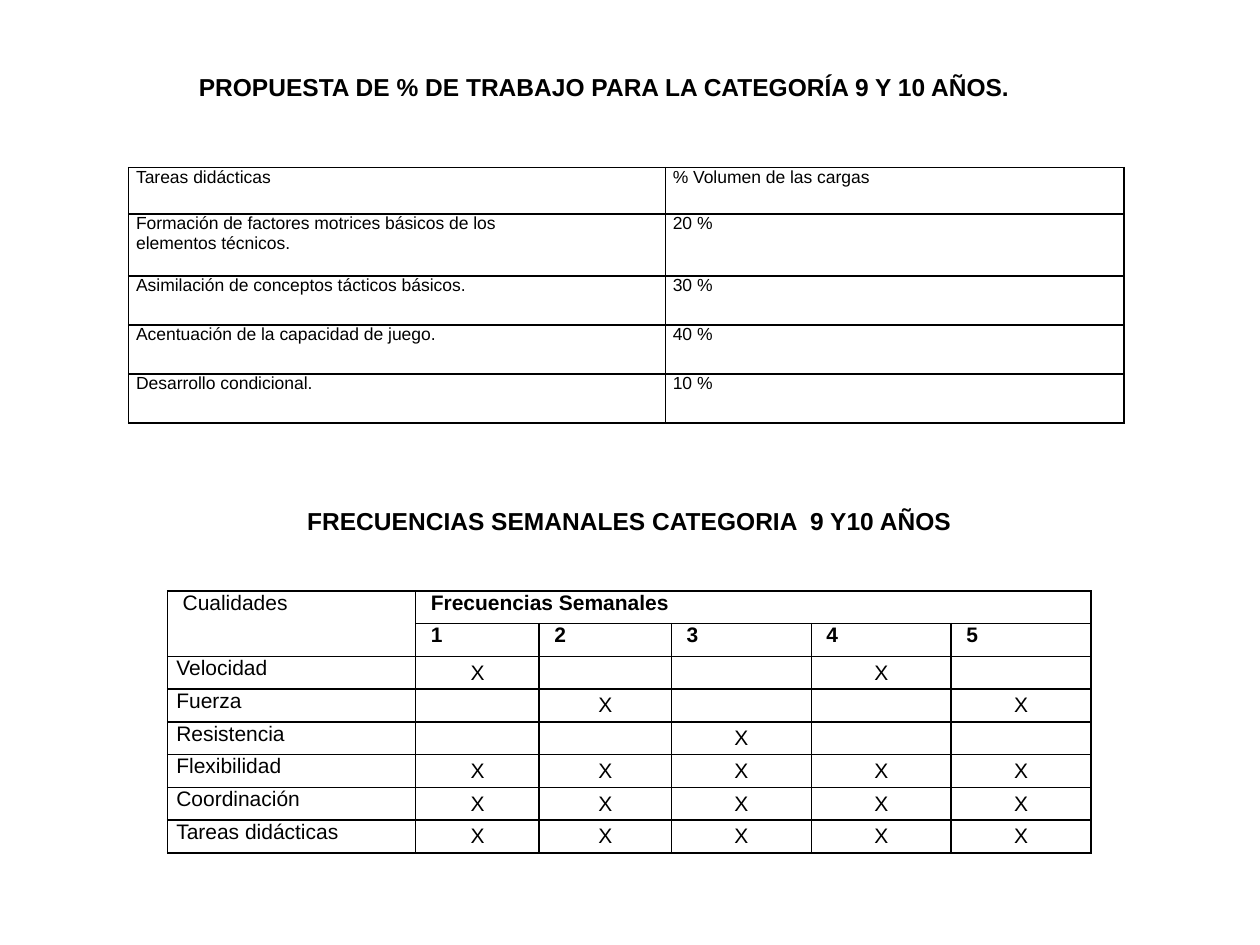
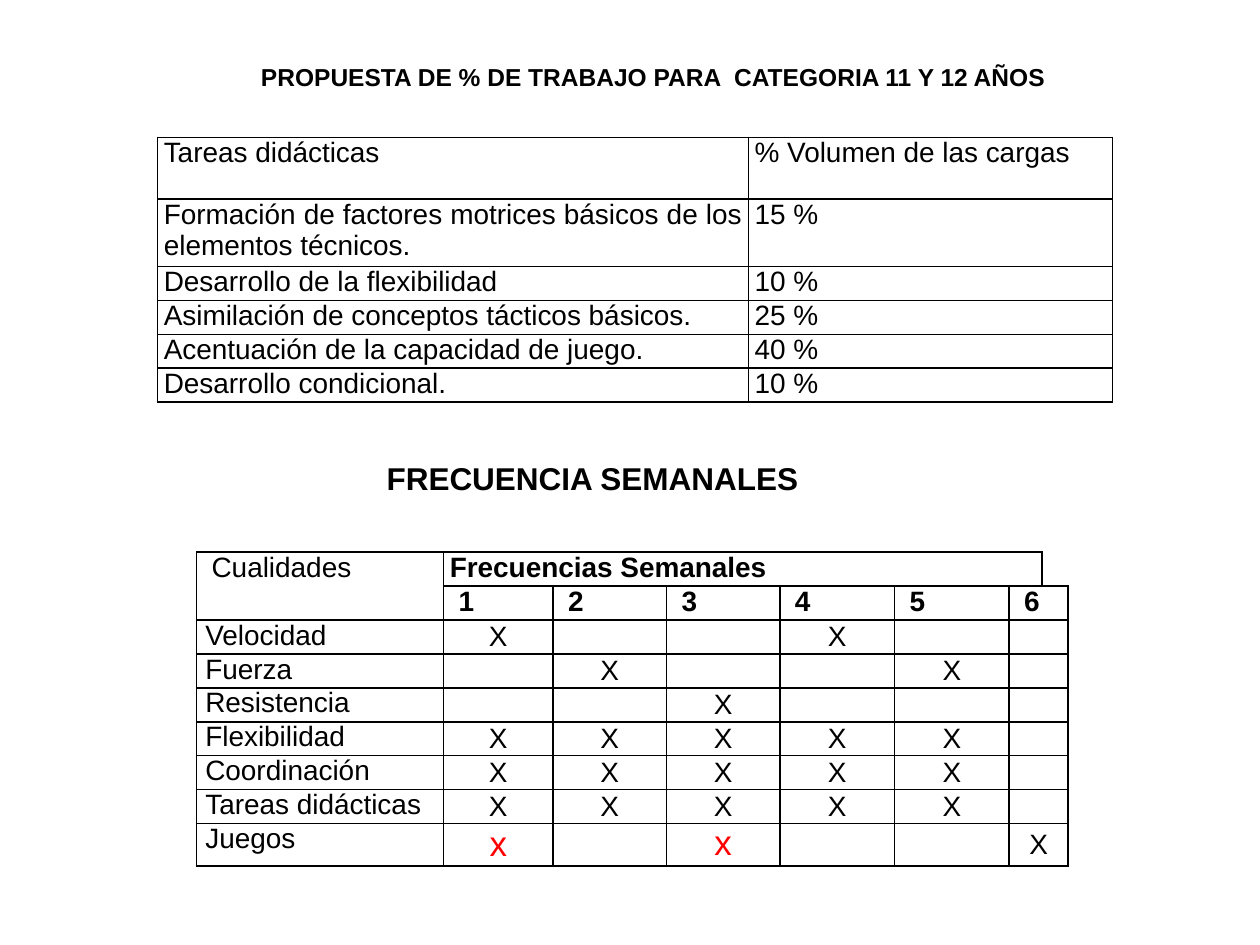
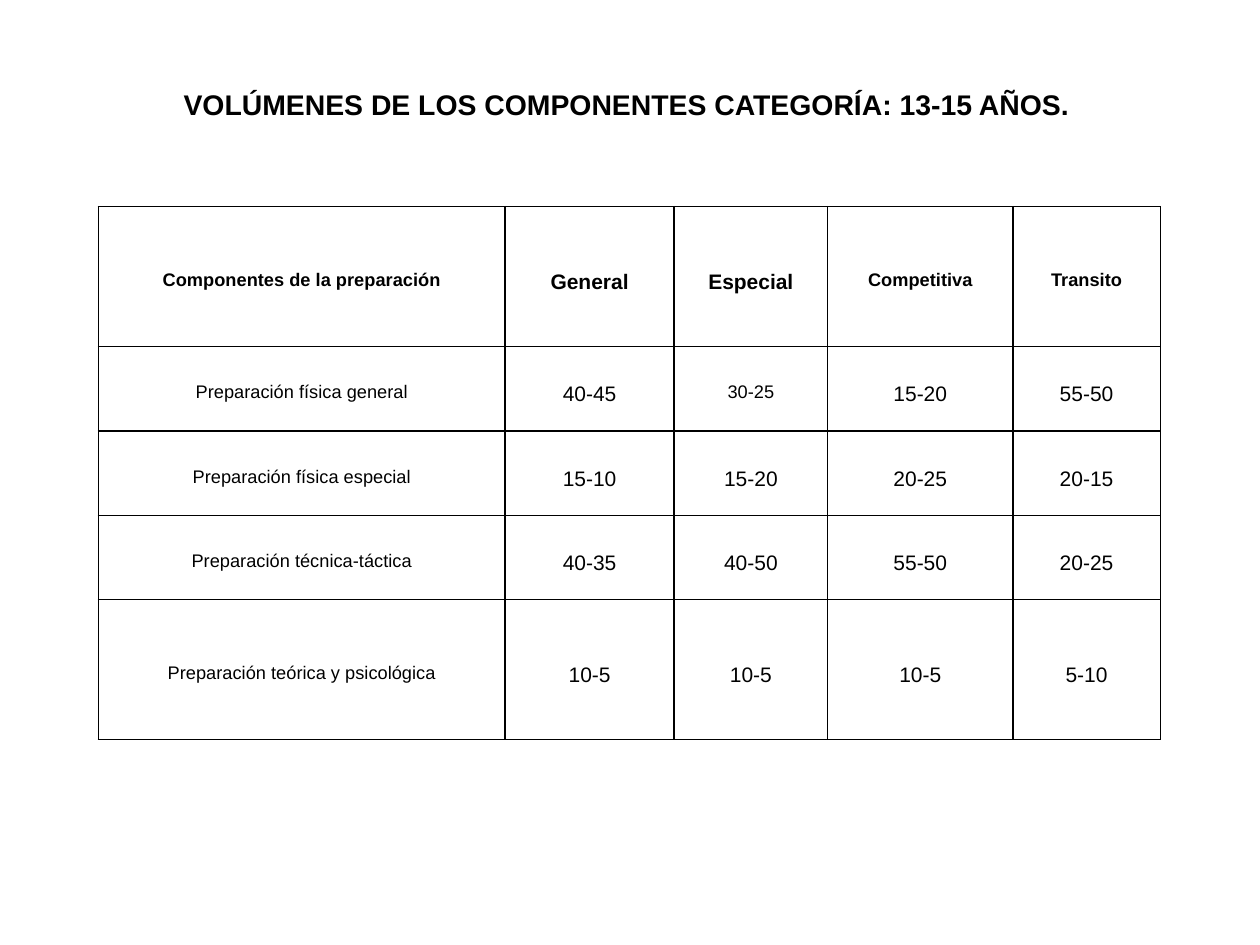
from pptx import Presentation
from pptx.dml.color import RGBColor
from pptx.enum.text import MSO_ANCHOR, PP_ALIGN
from pptx.oxml import parse_xml
from pptx.oxml.ns import nsdecls
from pptx.util import Inches, Pt

BLACK = RGBColor(0, 0, 0)
RED = RGBColor(255, 0, 0)
FONT = "Arial"
BORDER = ('<a:ln{side} {ns} w="12700"><a:solidFill><a:srgbClr val="{color}"/>'
          '</a:solidFill></a:ln{side}>')


def add_title(s, text, left, top, width, height, size, align):
    tb = s.shapes.add_textbox(Inches(left), Inches(top), Inches(width), Inches(height))
    tf = tb.text_frame
    tf.word_wrap = False
    tf.vertical_anchor = MSO_ANCHOR.MIDDLE
    p = tf.paragraphs[0]
    p.text = text
    p.alignment = align
    p.font.name, p.font.size, p.font.bold = FONT, Pt(size), True
    p.font.color.rgb = BLACK
    return p


def add_grid(s, left, top, widths, heights, rows, size, margin, align, open_cell=None):
    """Add a black-ruled table; open_cell keeps only its left and bottom rules."""
    table = s.shapes.add_table(len(heights), len(widths), Inches(left), Inches(top),
                               Inches(sum(widths)), Inches(sum(heights))).table
    table.first_row = table.horz_banding = False
    for col, width in zip(table.columns, widths):
        col.width = Inches(width)
    for row, height in zip(table.rows, heights):
        row.height = Inches(height)
    for i, row in enumerate(rows):
        for j in range(len(widths)):
            cell = table.cell(i, j)
            cell.text = row[j] if j < len(row) else ""
            cell.margin_left = cell.margin_right = Inches(margin)
            cell.margin_top = cell.margin_bottom = 0
            for side in "LB" if (i, j) == open_cell else "LRTB":
                cell._tc.get_or_add_tcPr().append(parse_xml(
                    BORDER.format(side=side, ns=nsdecls("a"), color=BLACK)))
            cell.fill.background()
            for p in cell.text_frame.paragraphs:
                p.alignment = align
                p.font.name, p.font.size, p.font.bold = FONT, Pt(size), False
                p.font.color.rgb = BLACK
    return table


prs = Presentation()
prs.slide_width, prs.slide_height = Inches(10), Inches(7.5)
slides = [prs.slides.add_slide(prs.slide_layouts[6]) for _ in range(3)]
s9, s11, s13 = slides

# Share of work per didactic task
add_title(s9, "PROPUESTA DE % DE TRABAJO PARA LA CATEGORÍA 9 Y 10 AÑOS.",
          1.48, 0.52, 6.64, 0.34, 14, PP_ALIGN.JUSTIFY)
add_title(s11, "PROPUESTA DE % DE TRABAJO PARA  CATEGORIA 11 Y 12 AÑOS",
          1.95, 0.44, 6.47, 0.34, 14, PP_ALIGN.CENTER)
header = ["Tareas didácticas", "% Volumen de las cargas"]
add_grid(s9, 1.02, 1.33, [4.26, 3.64], [0.37, 0.49] + [0.39] * 3, [
    header,
    ["Formación de factores motrices básicos de los\nelementos técnicos.", "20 %"],
    ["Asimilación de conceptos tácticos básicos.", "30 %"],
    ["Acentuación de la capacidad de juego.", "40 %"],
    ["Desarrollo condicional.", "10 %"],
], 10, 0.06, PP_ALIGN.JUSTIFY)
add_grid(s11, 1.25, 1.09, [4.69, 2.89], [0.49, 0.53] + [0.27] * 4, [
    header,
    ["Formación de factores motrices básicos de los elementos técnicos.", "15 %"],
    ["Desarrollo de la flexibilidad", "10 %"],
    ["Asimilación de conceptos tácticos básicos.", "25 %"],
    ["Acentuación de la capacidad de juego.", "40 %"],
    ["Desarrollo condicional.", "10 %"],
], 16, 0.05, PP_ALIGN.JUSTIFY)

# Weekly frequencies: the days on which each quality is trained
add_title(s9, "FRECUENCIAS SEMANALES CATEGORIA  9 Y10 AÑOS",
          2.34, 3.96, 5.47, 0.34, 14, PP_ALIGN.LEFT)
add_title(s11, "FRECUENCIA SEMANALES", 2.97, 3.59, 3.57, 0.4, 18, PP_ALIGN.LEFT)
training = {"Velocidad": "14", "Fuerza": "25", "Resistencia": "3", "Flexibilidad": "12345",
            "Coordinación": "12345", "Tareas didácticas": "12345"}
weekly = []
for s, left, top, widths, heights, days, size, extra, open_cell in [
    (s9, 1.33, 4.69, [1.97, 0.98, 1.05, 1.11, 1.11, 1.11], [0.26] * 8, "12345", 12, {}, None),
    (s11, 1.56, 4.38, [1.96, 0.87, 0.9, 0.9, 0.91, 0.91, 0.26, 0.1], [0.27] * 8 + [0.33],
     "123456", 16, {"Juegos": "136"}, (0, 7)),
]:
    rows = [["Cualidades", "Frecuencias Semanales"], ["", *days]]
    for quality, marked in (training | extra).items():
        rows.append([quality] + ["X" if day in marked else "" for day in days])
    table = add_grid(s, left, top, widths, heights, rows, size, 0.07, PP_ALIGN.LEFT, open_cell)
    for i in range(len(rows)):
        for j in range(len(widths)):
            cell = table.cell(i, j)
            if i < 2:
                cell.margin_left, cell.margin_right = Inches(0.12), Inches(0.05)
                cell.text_frame.paragraphs[0].font.bold = j > 0
            elif j > 0:
                cell.vertical_anchor = MSO_ANCHOR.MIDDLE
                cell.text_frame.paragraphs[0].alignment = PP_ALIGN.CENTER
    table.cell(0, 0).merge(table.cell(1, 0))
    table.cell(0, 1).merge(table.cell(0, len(days)))
    weekly.append(table)

older = weekly[1]
older.cell(0, 1).margin_left = Inches(0.05)
for i in range(1, 9):
    older.cell(i, 6).merge(older.cell(i, 7))
for j in (1, 3):
    p = older.cell(8, j).text_frame.paragraphs[0]
    p.runs[0].text = "x"
    p.font.size, p.font.color.rgb = Pt(20), RED
older.cell(8, 3).vertical_anchor = MSO_ANCHOR.TOP

# Volumes of the preparation components
volumes = add_grid(s13, 0.78, 1.64, [3.23, 1.34, 1.22, 1.47, 1.17],
                   [1.11, 0.67, 0.67, 0.67, 1.11], [
    ["Componentes de la preparación", "General", "Especial", "Competitiva", "Transito"],
    ["Preparación física general", "40-45", "30-25", "15-20", "55-50"],
    ["Preparación física especial", "15-10", "15-20", "20-25", "20-15"],
    ["Preparación técnica-táctica", "40-35", "40-50", "55-50", "20-25"],
    ["Preparación teórica y psicológica", "10-5", "10-5", "10-5", "5-10"],
], 12, 0.07, PP_ALIGN.CENTER)
raised = [add_title(s13, "VOLÚMENES DE LOS COMPONENTES CATEGORÍA: 13-15 AÑOS.",
                    0.78, 0.59, 8.38, 0.57, 28, PP_ALIGN.CENTER)]
for i in range(5):
    for j in range(5):
        cell = volumes.cell(i, j)
        cell.vertical_anchor = MSO_ANCHOR.MIDDLE
        p = cell.text_frame.paragraphs[0]
        p.line_spacing = 1.5
        p.font.bold = i == 0
        if j == 0 or (i, j) in [(0, 3), (0, 4), (1, 2)]:
            p.font.size = Pt(18)
            raised.append(p)
for p in raised:
    p.runs[0]._r.get_or_add_rPr().set("baseline", "30000")

prs.save("out.pptx")
